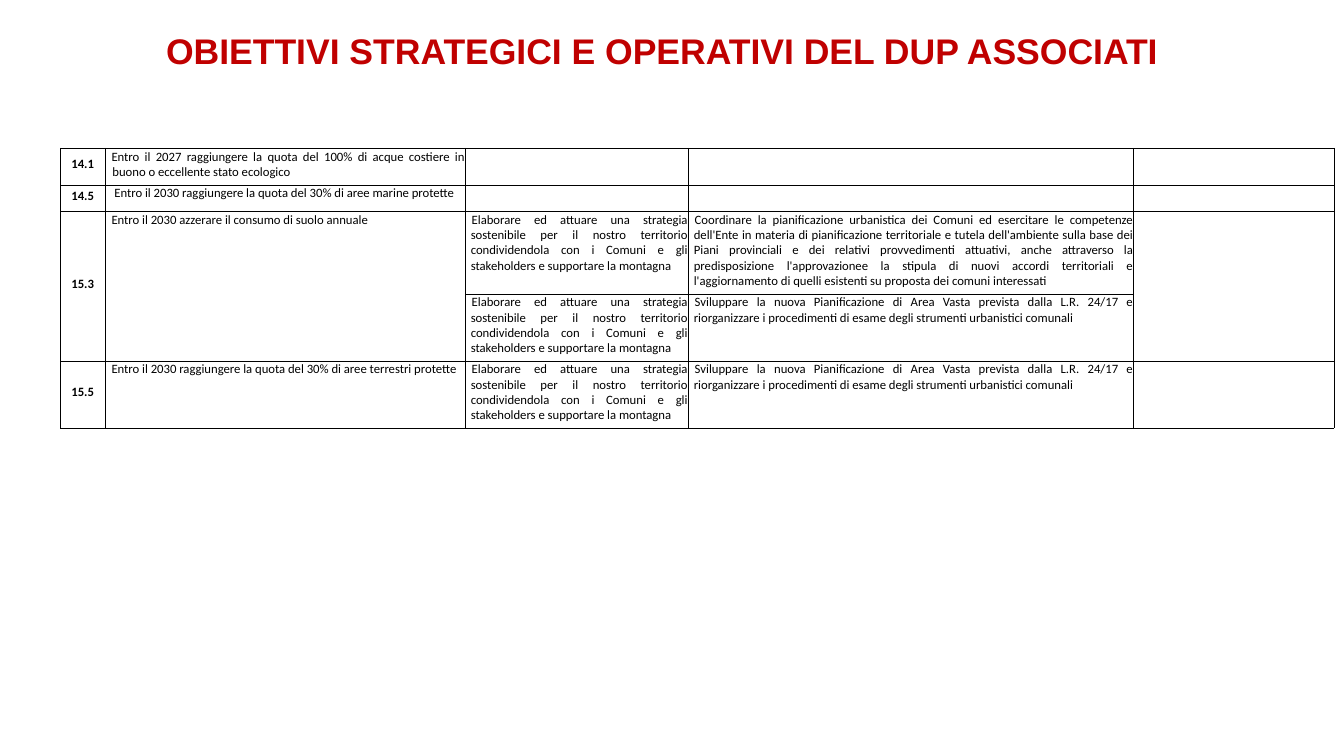
from lxml.etree import SubElement
from pptx import Presentation
from pptx.dml.color import RGBColor
from pptx.enum.text import MSO_ANCHOR, MSO_AUTO_SIZE, PP_ALIGN
from pptx.oxml.ns import qn
from pptx.util import Inches, Pt

WIDTH, HEIGHT = Inches(14.7), Inches(8.27)
COLUMNS = [0.49, 3.94, 2.44, 4.87, 2.19]
ROWS = [0.4, 0.29, 0.9, 0.73, 0.73]
MERGED = [0, 1, 4]

STRATEGY = (
    "Elaborare ed attuare una strategia sostenibile per il nostro territorio "
    "condividendola con i Comuni e gli stakeholders e supportare la montagna"
)
PLANNING = (
    "Sviluppare la nuova Pianificazione di Area Vasta prevista dalla L.R. 24/17 e "
    "riorganizzare i procedimenti di esame degli strumenti urbanistici comunali"
)
COORDINATION = (
    "Coordinare la pianificazione urbanistica dei Comuni ed esercitare le competenze "
    "dell'Ente in materia di pianificazione territoriale e tutela dell'ambiente sulla "
    "base dei Piani provinciali e dei relativi provvedimenti attuativi, anche attraverso "
    "la predisposizione l'approvazionee la stipula di nuovi accordi territoriali e "
    "l'aggiornamento di quelli esistenti su proposta dei comuni interessati"
)
GOALS = [
    ["14.1", "Entro il 2027 raggiungere la quota del 100% di acque costiere in buono o "
             "eccellente stato ecologico", "", "", ""],
    ["14.5", " Entro il 2030 raggiungere la quota del 30% di aree marine protette",
     "", "", ""],
    ["15.3", "Entro il 2030 azzerare il consumo di suolo annuale",
     STRATEGY, COORDINATION, ""],
    ["", "", STRATEGY, PLANNING, ""],
    ["15.5", "Entro il 2030 raggiungere la quota del 30% di aree terrestri protette",
     STRATEGY, PLANNING, ""],
]


def color(value):
    return RGBColor.from_string(value)


def apply(target, values):
    for name, value in values.items():
        setattr(target, name, value)


def write(p, text, size, name, fill, bold=False):
    r = p.add_run()
    r.text = text
    apply(r.font, {"size": Pt(size), "name": name, "bold": bold})
    r.font.color.rgb = color(fill)


def add_title(s, text):
    sp = s.shapes.title
    apply(sp, {"left": 0, "top": Inches(0.03),
               "width": int(WIDTH * 0.985), "height": Inches(0.72)})
    tf = sp.text_frame
    apply(tf, {"word_wrap": True, "auto_size": MSO_AUTO_SIZE.NONE,
               "vertical_anchor": MSO_ANCHOR.TOP})
    p = tf.paragraphs[0]
    apply(p, {"alignment": PP_ALIGN.CENTER, "line_spacing": 1.5, "space_after": Pt(6)})
    write(p, text, 28, "Arial", "C00000", True)


def add_borders(cell):
    tcPr = cell._tc.get_or_add_tcPr()
    for side in ("lnL", "lnR", "lnT", "lnB"):
        ln = SubElement(tcPr, qn(f"a:{side}"), w=str(Pt(0.25)))
        fill = SubElement(ln, qn("a:solidFill"))
        SubElement(fill, qn("a:srgbClr"), val="000000")


def fill_cell(cell, text, column):
    add_borders(cell)
    cell.fill.background()
    is_code = column == 0
    edge = Inches(0.01)
    apply(cell, {"margin_left": edge, "margin_right": edge, "margin_top": edge,
                 "margin_bottom": Inches(0.05),
                 "vertical_anchor": MSO_ANCHOR.MIDDLE if is_code else MSO_ANCHOR.TOP})
    p = cell.text_frame.paragraphs[0]
    p.alignment = PP_ALIGN.CENTER if is_code else PP_ALIGN.JUSTIFY
    if not is_code:
        margin, indent = (0.07, -0.01) if column == 1 else (0.05, 0.01)
        pPr = p._p.get_or_add_pPr()
        pPr.set("marL", str(Inches(margin)))
        pPr.set("indent", str(Inches(indent)))
    if text:
        write(p, text, 10, "Calibri", "000000", is_code)
    else:
        SubElement(p._p, qn("a:endParaRPr"), sz="1000")


def add_goals(s):
    frame = s.shapes.add_table(len(ROWS), len(COLUMNS), Inches(0.66), Inches(1.62),
                               Inches(sum(COLUMNS)), Inches(sum(ROWS)))
    table = frame.table
    apply(table, {"first_row": False, "horz_banding": False})
    for column, width in zip(table.columns, COLUMNS):
        column.width = Inches(width)
    for row, height in zip(table.rows, ROWS):
        row.height = Inches(height)
    for i, goal in enumerate(GOALS):
        for j, text in enumerate(goal):
            fill_cell(table.cell(i, j), text, j)
    for j in MERGED:
        table.cell(2, j).merge(table.cell(3, j))


def main():
    prs = Presentation()
    apply(prs, {"slide_width": WIDTH, "slide_height": HEIGHT})
    s = prs.slides.add_slide(prs.slide_layouts[5])
    add_title(s, "OBIETTIVI STRATEGICI E OPERATIVI DEL DUP ASSOCIATI")
    add_goals(s)
    prs.save("out.pptx")


if __name__ == "__main__":
    main()
